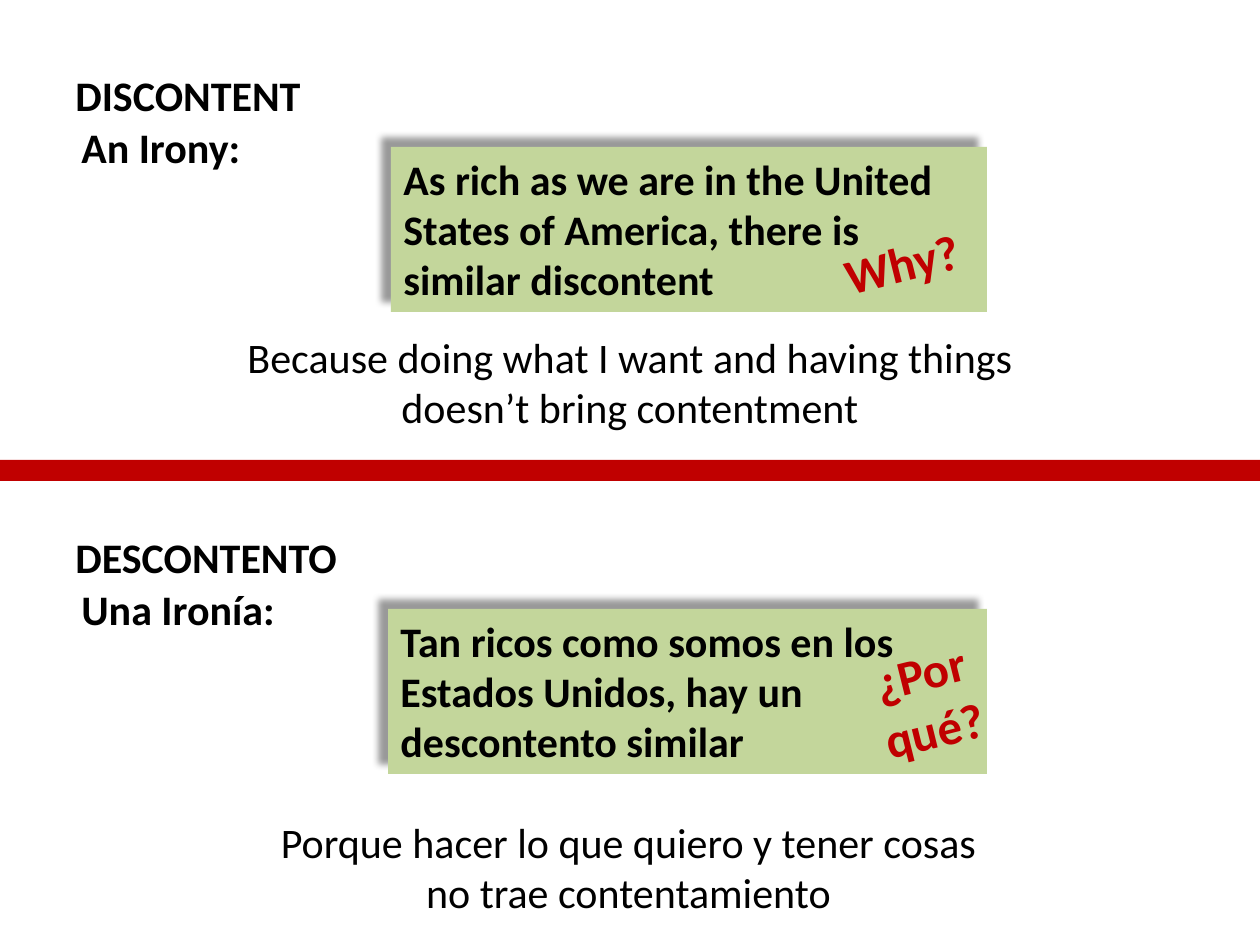
from dataclasses import dataclass

from lxml.etree import SubElement as Sub
from pptx import Presentation
from pptx.dml.color import RGBColor as Rgb
from pptx.enum.shapes import MSO_SHAPE as Kind
from pptx.enum.text import MSO_ANCHOR as Anchor, PP_ALIGN as Align
from pptx.oxml.ns import qn
from pptx.util import Emu, Pt


@dataclass(frozen=True)
class Theme:
    font: str = "Calibri"
    ink: str = "000000"
    red: str = "C00000"
    green: str = "C3D69B"
    body: int = 24
    big: int = 28


THEME = Theme()
WIDE, HIGH = 1260, 945
SPLIT, BAR = 460, 21


def px(n):
    return Emu(round(n * 914400 / 126))


def write(shape, text, size=THEME.body, color=THEME.ink, bold=True,
          align=Align.LEFT, anchor=Anchor.TOP):
    """Put text in a shape, one paragraph to a line."""
    frame = shape.text_frame
    frame.word_wrap = True
    frame.vertical_anchor = anchor
    frame.text = text
    for para in frame.paragraphs:
        para.alignment = align
        font = para.runs[0].font
        font.name, font.size, font.bold = THEME.font, Pt(size), bold
        font.color.rgb = Rgb.from_string(color)


def label(slide, box, text, turn=0, **style):
    shape = slide.shapes.add_textbox(*map(px, box))
    shape.rotation = turn
    write(shape, text, **style)


def block(slide, box, color):
    shape = slide.shapes.add_shape(Kind.RECTANGLE, *map(px, box))
    shape.shadow.inherit = False
    shape.fill.solid()
    shape.fill.fore_color.rgb = Rgb.from_string(color)
    shape.line.fill.background()
    return shape


def shade(shape):
    """Cast a soft shadow up and to the left."""
    effects = shape._element.spPr.find(qn("a:effectLst"))
    outer = Sub(effects, qn("a:outerShdw"), blurRad=str(Pt(4)),
                dist=str(Pt(8)), dir=str(225 * 60000), algn="br",
                rotWithShape="0")
    color = Sub(outer, qn("a:srgbClr"), val=THEME.ink)
    Sub(color, qn("a:alpha"), val="40000")


def card(slide, box, text, ask, spot):
    """Green statement with a tilted question at a spot inside it."""
    left, top, _, _ = box
    shape = block(slide, box, THEME.green)
    shade(shape)
    write(shape, text)
    x, y, w, h = spot
    label(slide, (left + x, top + y, w, h), ask, turn=346.1,
          size=THEME.big, color=THEME.red, align=Align.CENTER)


def panel(slide, box, title, lead, text, width, ask, spot, answer):
    """One language: headings, card and the answer at the foot."""
    left, top, wide, high = box
    label(slide, (left + 63, top + 63, 567, 63), title)
    label(slide, (left + 69, top + 115, 1159, 63), lead)
    edge = left + 987
    card(slide, (edge - width, top + 147, width, 165), text, ask, spot)
    label(slide, (left, top + high - 135, wide, 115), answer,
          bold=False, align=Align.CENTER)


def main():
    deck = Presentation()
    deck.slide_width, deck.slide_height = px(WIDE), px(HIGH)
    slide = deck.slides.add_slide(deck.slide_layouts[6])
    block(slide, (0, SPLIT, WIDE, BAR), THEME.red)
    panel(slide, (0, 0, WIDE, SPLIT), "DISCONTENT", "An Irony:",
          "As rich as we are in the United States of America, "
          "there is similar discontent", 596,
          "Why?", (434, 80, 154, 72),
          "Because doing what I want and having things\n"
          "doesn’t bring contentment")
    start = SPLIT + 2
    panel(slide, (0, start, WIDE - 3, HIGH - start),
          "DESCONTENTO", "Una Ironía:",
          "Tan ricos como somos en los Estados Unidos, "
          "hay un descontento similar", 599,
          "¿Por qué?", (476, 26, 126, 131),
          "Porque hacer lo que quiero y tener cosas\n"
          "no trae contentamiento")
    deck.save("out.pptx")


if __name__ == "__main__":
    main()
